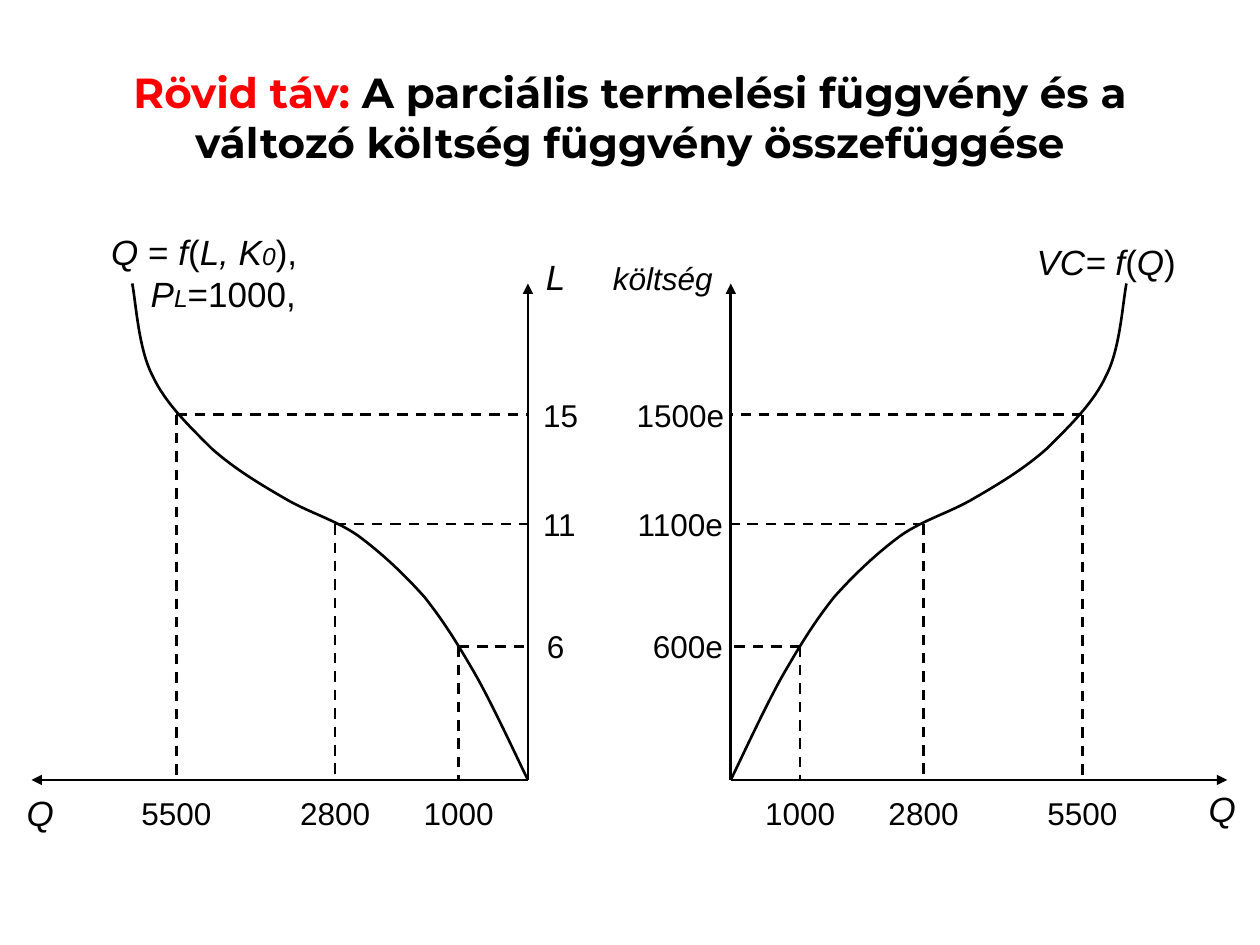
from lxml.etree import SubElement
from pptx import Presentation
from pptx.dml.color import RGBColor
from pptx.enum.dml import MSO_LINE_DASH_STYLE as DASH
from pptx.enum.shapes import MSO_CONNECTOR
from pptx.enum.text import MSO_ANCHOR, MSO_AUTO_SIZE, PP_ALIGN
from pptx.oxml.ns import qn
from pptx.util import Inches, Pt

BLACK = RGBColor(0, 0, 0)
RED = RGBColor(255, 0, 0)

# Distances from the origin along Q and upwards: start, then cubic Bezier triples.
CURVE = [
    (0, 0),
    (0.07, 0.14), (0.29, 0.62), (0.43, 0.86),
    (0.57, 1.10), (0.67, 1.26), (0.82, 1.45),
    (0.98, 1.63), (1.16, 1.80), (1.35, 1.94),
    (1.54, 2.07), (1.74, 2.12), (1.94, 2.24),
    (2.13, 2.35), (2.33, 2.47), (2.51, 2.63),
    (2.68, 2.80), (2.88, 2.99), (2.98, 3.21),
    (3.09, 3.42), (3.11, 3.78), (3.14, 3.94),
]
MARKS = [("1000", 0.55, 1.06), ("2800", 1.53, 2.03), ("5500", 2.79, 2.90)]
AXIS_LENGTH = 3.94


def add_runs(p, runs, size, font="Arial", bold=False):
    """Add (text, format) pairs; a format may hold size, italic and color."""
    for text, fmt in runs:
        r = p.add_run()
        r.text = text
        r.font.name = font
        r.font.size = Pt(fmt.get("size", size))
        r.font.bold = bold
        r.font.italic = fmt.get("italic", False)
        r.font.color.rgb = fmt.get("color", BLACK)


def add_label(slide, runs, center, top, width=0.94, size=18, italic=False):
    """Place a centred label with a hanging indent; runs may be a plain string."""
    if isinstance(runs, str):
        runs = [(runs, {"italic": italic})]
    height = 0.43 if size == 20 else 0.4
    sp = slide.shapes.add_textbox(Inches(center - width / 2), Inches(top),
                                  Inches(width), Inches(height))
    tf = sp.text_frame
    tf.word_wrap = True
    tf.auto_size = MSO_AUTO_SIZE.SHAPE_TO_FIT_TEXT
    p = tf.paragraphs[0]
    p.alignment = PP_ALIGN.CENTER
    pPr = p._p.get_or_add_pPr()
    pPr.set("marL", str(Inches(0.38)))
    pPr.set("indent", str(-Inches(0.38)))
    add_runs(p, runs, size)
    return sp


def add_line(slide, start, end, dashed=False, arrow=False):
    line = slide.shapes.add_connector(MSO_CONNECTOR.STRAIGHT,
                                      *(Inches(v) for v in (*start, *end)))
    line.line.color.rgb = BLACK
    line.line.width = Pt(1.5)
    if dashed:
        line.line.dash_style = DASH.DASH
    if arrow:
        SubElement(line.line._get_or_add_ln(), qn("a:tailEnd"), type="triangle")
    SubElement(line._element.spPr, qn("a:effectLst"))


def add_curve(slide, points):
    """Draw an open cubic Bezier curve through a start point and triples."""
    start, *rest = [(Inches(x), Inches(y)) for x, y in points]
    builder = slide.shapes.build_freeform(*start)
    builder.add_line_segments(rest, close=False)
    sp = builder.convert_to_shape()
    sp.shadow.inherit = False
    sp.fill.background()
    sp.line.color.rgb = BLACK
    sp.line.width = Pt(1.5)
    outline = sp._element.xpath(".//a:path")[0]
    segments = outline.findall(qn("a:lnTo"))
    for i in range(0, len(segments), 3):
        bezier = SubElement(outline, qn("a:cubicBezTo"))
        for segment in segments[i:i + 3]:
            bezier.append(segment[0])
            outline.remove(segment)


def add_graph(slide, x, y, direction, levels):
    """Draw axes, curve and marked points; Q runs left (-1) or right (1) from x.

    levels holds a label and its centre's offset from the vertical axis.
    """
    def at(q, height):
        return x + direction * q, y - height

    add_line(slide, at(0, 0), at(0, AXIS_LENGTH), arrow=True)
    add_line(slide, at(0, 0), at(AXIS_LENGTH, 0), arrow=True)
    add_curve(slide, [at(q, height) for q, height in CURVE])
    for (quantity, q, height), (level, offset) in zip(MARKS, levels):
        add_line(slide, at(q, height), at(0, height), dashed=True)
        add_line(slide, at(q, height), at(q, 0), dashed=True)
        add_label(slide, quantity, at(q, 0)[0], y + 0.06)
        add_label(slide, level, x + offset, y - height - 0.2, width=1.08)


def add_title(slide, left, top, width, height):
    title = slide.shapes.title
    title.left, title.top = Inches(left), Inches(top)
    title.width, title.height = Inches(width), Inches(height)
    tf = title.text_frame
    tf.word_wrap = True
    tf.vertical_anchor = MSO_ANCHOR.MIDDLE
    p = tf.paragraphs[0]
    p.alignment = PP_ALIGN.CENTER
    add_runs(p, [
        ("Rövid táv: ", {"color": RED}),
        ("A parciális termelési függvény és a változó költség függvény "
         "összefüggése", {}),
    ], size=24, font="Montserrat", bold=True)


def add_production_graph(slide, x, y):
    add_graph(slide, x, y, -1, [("6", 0.22), ("11", 0.25), ("15", 0.26)])
    add_label(slide, "L", x + 0.22, y - 4.21, width=0.63, size=20, italic=True)
    add_label(slide, "Q", x - 3.87, y + 0.04, width=0.63, size=20, italic=True)
    italic, sub = {"italic": True}, {"italic": True, "size": 14}
    formula = add_label(slide, [
        ("Q", italic), (" = ", {}), ("f", italic), ("(", {}), ("L, K", italic),
        ("0", sub), ("),", {}), (" P", italic), ("L", sub), ("=1000, ", {}),
    ], x - 2.57, y - 4.41, width=1.89, size=20)
    formula.height = Inches(0.77)


def add_cost_graph(slide, x, y):
    add_graph(slide, x, y, 1, [("600e", -0.34), ("1100e", -0.4), ("1500e", -0.4)])
    add_label(slide, "költség", x - 0.54, y - 4.18, width=1.39, italic=True)
    add_label(slide, "Q", x + 3.9, y + 0.01, width=0.63, size=20, italic=True)
    italic = {"italic": True}
    add_label(slide, [("VC= f", italic), ("(", {}), ("Q", italic), (")", {})],
              x + 2.98, y - 4.33, width=1.57, size=20)


def main():
    prs = Presentation()
    prs.slide_width, prs.slide_height = Inches(10), Inches(7.5)
    slide = prs.slides.add_slide(prs.slide_layouts[5])
    add_title(slide, 0.5, 0.3, 9, 1.25)
    add_production_graph(slide, 4.19, 6.19)
    add_cost_graph(slide, 5.8, 6.19)
    prs.save("out.pptx")


if __name__ == "__main__":
    main()
